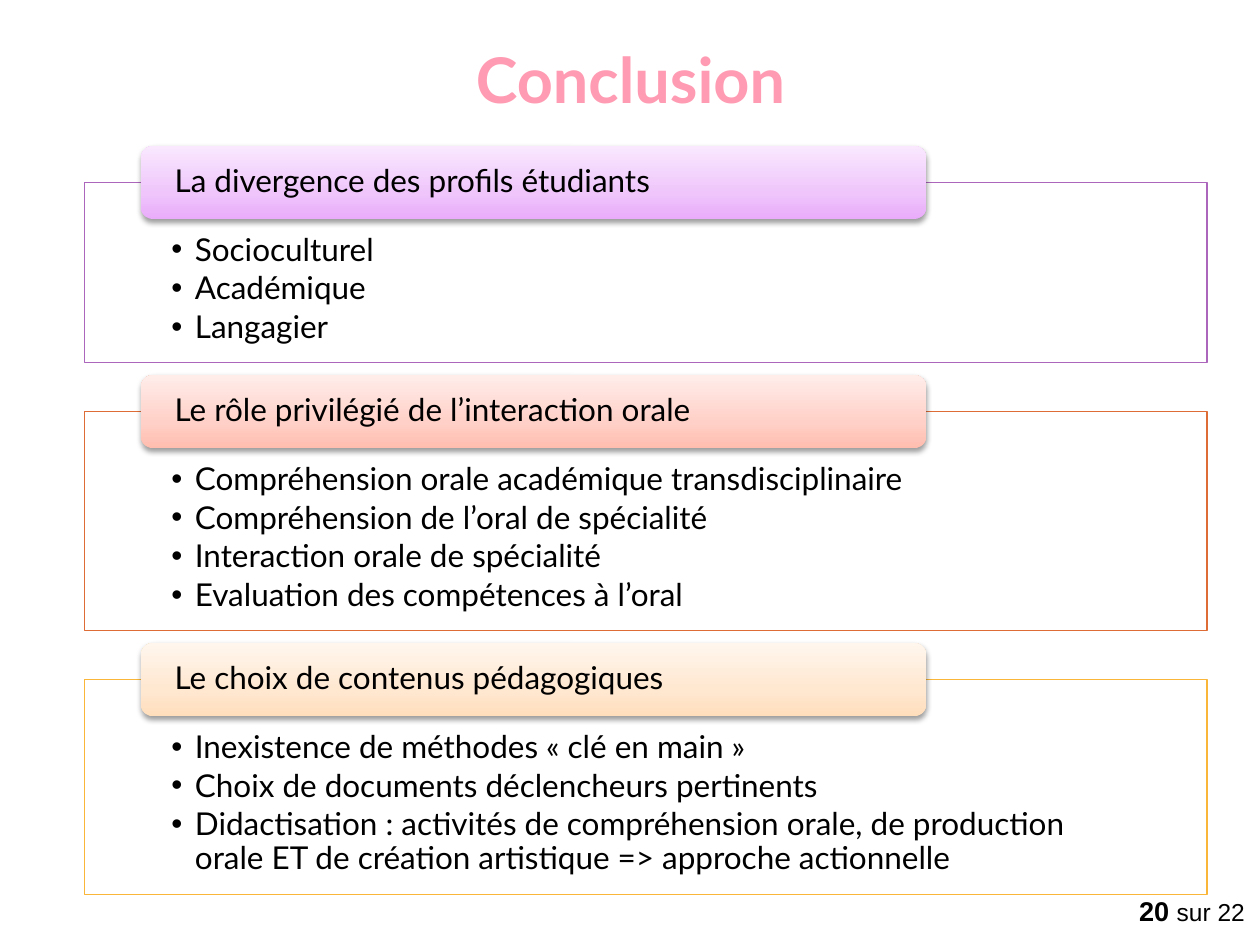
from lxml.etree import SubElement
from pptx import Presentation
from pptx.dml.color import RGBColor
from pptx.enum.shapes import MSO_SHAPE as SHAPE
from pptx.enum.text import MSO_ANCHOR as ANCHOR, MSO_AUTO_SIZE as AUTO, PP_ALIGN as ALIGN
from pptx.oxml.ns import qn
from pptx.util import Pt

SECTIONS = [
    ("La divergence des profils étudiants",
     ["Socioculturel", "Académique", "Langagier"],
     103, "AC66BB", ("E9ACFA", "EFC5FB", "F9E8FE")),
    ("Le rôle privilégié de l’interaction orale",
     ["Compréhension orale académique transdisciplinaire",
      "Compréhension de l’oral de spécialité",
      "Interaction orale de spécialité",
      "Evaluation des compétences à l’oral"],
     125.3, "DE6C36", ("FFBDAF", "FFD0C7", "FFEDEA")),
    ("Le choix de contenus pédagogiques",
     ["Inexistence de méthodes « clé en main »",
      "Choix de documents déclencheurs pertinents",
      "Didactisation : activités de compréhension orale, de production "
      "orale ET de création artistique => approche actionnelle"],
     123.1, "F9B639", ("FFDEBC", "FFE7D0", "FFF6ED")),
]
FIRST_TOP, GAP, TAB_RISE = 104.4, 28.1, 20.9


def rgb(color):
    return RGBColor.from_string(color)


def sub(parent, tag, **attrs):
    return SubElement(parent, qn(tag), {k: str(v) for k, v in attrs.items()})


class Deck:
    font, size, ink = "Lato", 18, "000000"

    def __init__(self, width, height):
        self.prs = Presentation()
        self.prs.slide_width, self.prs.slide_height = Pt(width), Pt(height)

    def add_slide(self):
        self.s = self.prs.slides.add_slide(self.prs.slide_layouts[5])

    def frame(self, sp, insets, anchor=ANCHOR.TOP):
        tf = sp.text_frame
        tf.word_wrap, tf.auto_size, tf.vertical_anchor = True, AUTO.NONE, anchor
        (tf.margin_left, tf.margin_top,
         tf.margin_right, tf.margin_bottom) = map(Pt, insets)
        return tf

    def style(self, r, size=None, color=None, font=None, bold=False):
        r.font.name, r.font.size = font or self.font, Pt(size or self.size)
        r.font.bold, r.font.color.rgb = bold, rgb(color or self.ink)

    def title(self, text, x, y, w, h):
        sp = self.s.shapes.title
        sp.left, sp.top, sp.width, sp.height = map(Pt, (x, y, w, h))
        tf = self.frame(sp, (0, 10.1, 0, 0))
        tf.text = text
        p = tf.paragraphs[0]
        p.alignment, p.line_spacing = ALIGN.CENTER, Pt(39.1)
        self.style(p.runs[0], 36, "FF9BB2", bold=True)

    def shape(self, kind, x, y, w, h):
        sp = self.s.shapes.add_shape(kind, *map(Pt, (x, y, w, h)))
        sp.shadow.inherit = False
        return sp

    def lines(self, tf, texts):
        tf.text = "\n".join(texts)
        for p in tf.paragraphs:
            p.alignment, p.line_spacing, p.space_after = ALIGN.LEFT, 0.9, Pt(2.7)
            self.style(p.runs[0])

    def panel(self, items, y, h, outline):
        sp = self.shape(SHAPE.RECTANGLE, 48.2, y, 642.2, h)
        sp.fill.solid()
        sp.fill.fore_color.rgb = rgb("FFFFFF")
        sp.line.color.rgb, sp.line.width = rgb(outline), Pt(0.75)
        tf = self.frame(sp, (49.8, 29.5, 49.8, 10.1))
        self.lines(tf, items)
        for p in tf.paragraphs:
            pPr = p._p.get_or_add_pPr()
            pPr.set("marL", str(Pt(13.5)))
            pPr.set("indent", str(-Pt(13.5)))
            sub(pPr, "a:buFont", typeface="Arial")
            sub(pPr, "a:buChar", char="•")

    def tab(self, text, y, shades):
        sp = self.shape(SHAPE.ROUNDED_RECTANGLE, 80.6, y, 449.3, 41.8)
        sp.line.fill.background()
        self.gradient(sp, shades)
        self.drop_shadow(sp)
        self.lines(self.frame(sp, (17.3, 0, 17.3, 0), ANCHOR.MIDDLE), [text])

    def gradient(self, sp, shades):
        """Shade from bottom to top with three stops."""
        sp.fill.gradient()
        sp.fill.gradient_angle = 90
        stops = sp._element.spPr.find(".//" + qn("a:gsLst"))
        for gs in list(stops):
            stops.remove(gs)
        for pos, color in zip((0, 35, 100), shades):
            sub(sub(stops, "a:gs", pos=pos * 1000), "a:srgbClr", val=color)

    def drop_shadow(self, sp):
        effects = sp._element.spPr.find(qn("a:effectLst"))
        shadow = sub(effects, "a:outerShdw", blurRad=Pt(3.1), dist=Pt(1.6),
                     dir=5400000, rotWithShape=0)
        sub(sub(shadow, "a:srgbClr", val="000000"), "a:alpha", val=38000)

    def page_number(self, number, total, x, y, w, h):
        sp = self.s.shapes.add_textbox(*map(Pt, (x, y, w, h)))
        p = self.frame(sp, (2.9, 0, 0, 0)).paragraphs[0]
        for text, size, bold in ((f"{number} ", 15.5, True),
                                 (f"sur {total}", 14, False)):
            r = p.add_run()
            r.text = text
            self.style(r, size, font="Arial", bold=bold)


def main():
    deck = Deck(720.72, 540.72)
    deck.add_slide()
    deck.title("Conclusion", 112.3, 17.3, 496.8, 49.7)
    y = FIRST_TOP
    for heading, items, height, outline, shades in SECTIONS:
        deck.panel(items, y, height, outline)
        deck.tab(heading, y - TAB_RISE, shades)
        y += height + GAP
    deck.page_number(20, 22, 648.7, 511.9, 69.1, 18.7)
    deck.prs.save("out.pptx")


if __name__ == "__main__":
    main()
